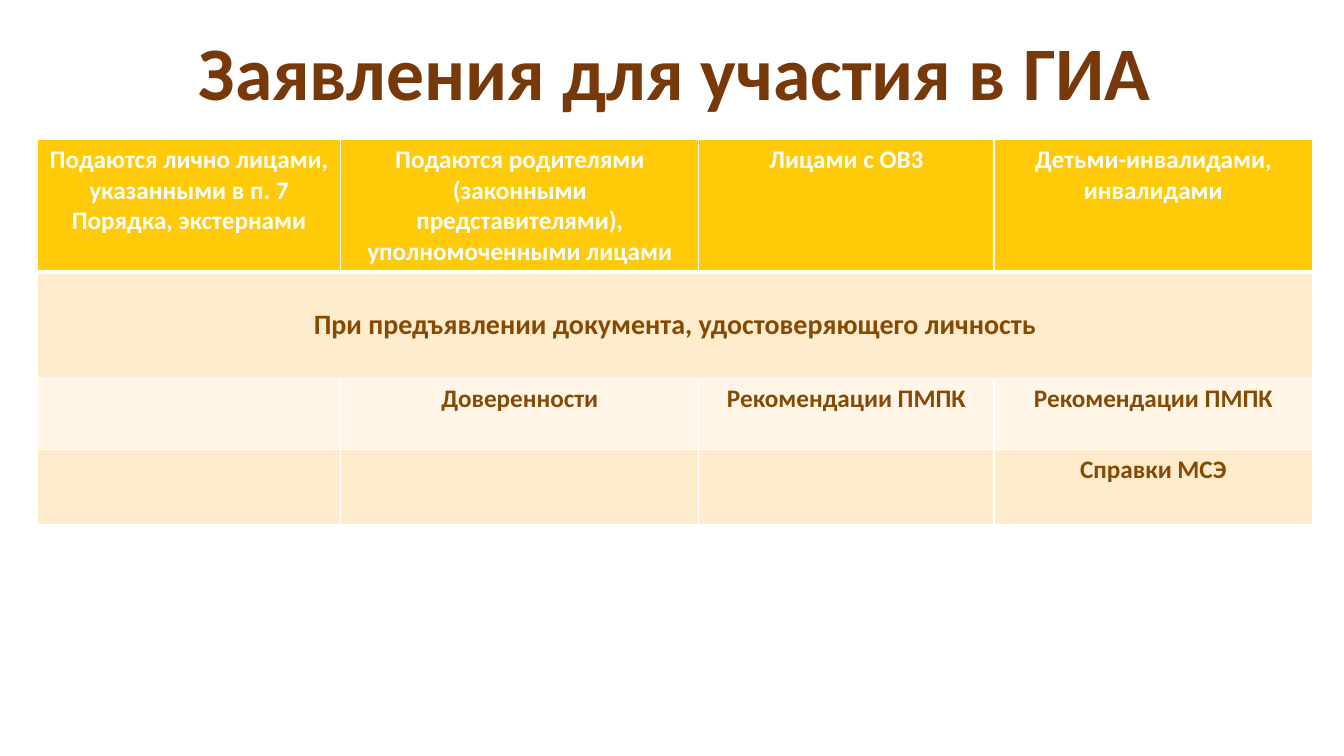
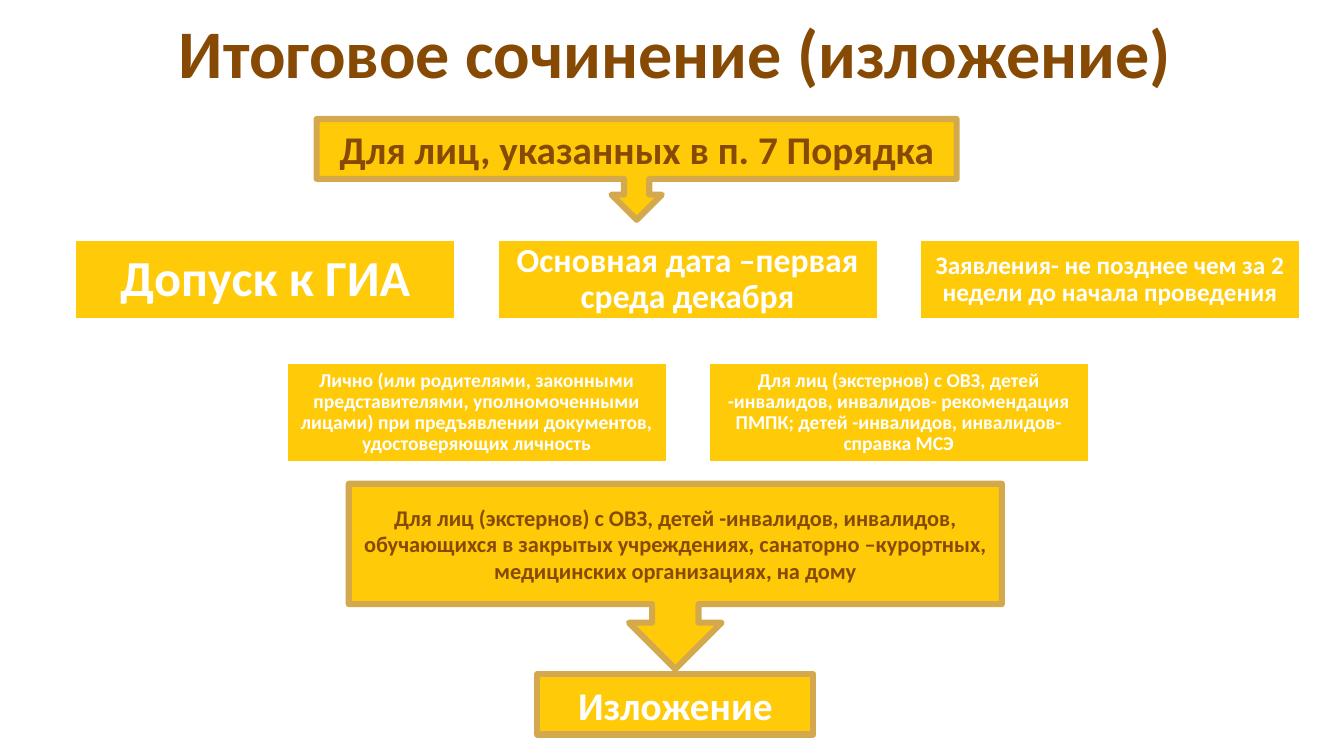
from lxml.etree import SubElement
from pptx import Presentation
from pptx.dml.color import RGBColor
from pptx.enum.shapes import MSO_SHAPE
from pptx.enum.text import MSO_ANCHOR, PP_ALIGN
from pptx.oxml.ns import qn
from pptx.util import Cm, Pt

# Shared style
FONT = "Calibri"
GOLD, OCHRE, WHITE = "FFCA08", "D4A94E", "FFFFFF"
BROWN, DARK_BROWN = "864A04", "77380A"
BAND, LIGHT_BAND = "FFECCC", "FFF6E7"
LINE_WIDTH = 4.33


def rgb(value):
    return RGBColor.from_string(value)


def write(tf, text, size=18, color=WHITE, spacing=1.0,
          anchor=MSO_ANCHOR.MIDDLE, inset=None):
    """Fill a text frame with one bold centred paragraph."""
    tf.word_wrap = True
    tf.vertical_anchor = anchor
    if inset is not None:
        tf.margin_left = tf.margin_right = Cm(inset)
        tf.margin_top = tf.margin_bottom = Cm(inset)
    p = tf.paragraphs[0]
    p.alignment = PP_ALIGN.CENTER
    p.line_spacing = spacing
    r = p.add_run()
    r.text = text
    r.font.name = FONT
    r.font.size = Pt(size)
    r.font.bold = True
    r.font.color.rgb = rgb(color)


def add_title(s, text, height, size, color):
    sp = s.shapes.add_textbox(Cm(0.81), Cm(0.43), Cm(32.41), Cm(height))
    write(sp.text_frame, text, size=size, color=color, spacing=0.9)


def add_box(s, text, left, top, width, height, shape=MSO_SHAPE.RECTANGLE,
            line=WHITE, adjustment=None, **text_format):
    sp = s.shapes.add_shape(shape, Cm(left), Cm(top), Cm(width), Cm(height))
    sp.shadow.inherit = False
    sp.fill.solid()
    sp.fill.fore_color.rgb = rgb(GOLD)
    sp.line.color.rgb = rgb(line)
    sp.line.width = Pt(LINE_WIDTH)
    if adjustment is not None:
        sp.adjustments[3] = adjustment
    write(sp.text_frame, text, **text_format)


def set_borders(cell, bottom):
    """Draw white cell borders; the bottom one has its own width."""
    tc_pr = cell._tc.get_or_add_tcPr()
    widths = {"a:lnL": 1, "a:lnR": 1, "a:lnT": 1, "a:lnB": bottom}
    for i, (tag, width) in enumerate(widths.items()):
        ln = SubElement(tc_pr, qn(tag), w=str(Pt(width)))
        fill = SubElement(ln, qn("a:solidFill"))
        SubElement(fill, qn("a:srgbClr"), val=WHITE)
        tc_pr.insert(i, ln)


def add_table(s, rows, left, top, widths, heights, fills):
    frame = s.shapes.add_table(len(rows), len(widths), Cm(left), Cm(top),
                               Cm(sum(widths)), Cm(sum(heights)))
    table = frame.table
    for column, width in zip(table.columns, widths):
        column.width = Cm(width)
    for i, texts in enumerate(rows):
        table.rows[i].height = Cm(heights[i])
        header, spanning = i == 0, len(texts) == 1
        for j, cell in enumerate(table.rows[i].cells):
            cell.fill.solid()
            cell.fill.fore_color.rgb = rgb(fills[i])
            set_borders(cell, bottom=3 if header else 1)
            if j < len(texts) and texts[j]:
                write(cell.text_frame, texts[j], size=20 if spanning else 18,
                      color=WHITE if header else BROWN)
                cell.vertical_anchor = (MSO_ANCHOR.MIDDLE if spanning
                                        else MSO_ANCHOR.TOP)
        if spanning:
            table.cell(i, 0).merge(table.cell(i, len(widths) - 1))


def build_applications(s):
    add_title(s, "Заявления для участия в ГИА", 2.97, 54, DARK_BROWN)
    rows = [
        ["Подаются лично лицами, указанными в п. 7 Порядка, экстернами",
         "Подаются родителями (законными представителями), "
         "уполномоченными лицами",
         "Лицами с ОВ3", "Детьми-инвалидами, инвалидами"],
        ["При предъявлении документа, удостоверяющего личность"],
        ["", "Доверенности", "Рекомендации ПМПК", "Рекомендации ПМПК"],
        ["", "", "", "Справки МСЭ"],
    ]
    add_table(s, rows, 0.94, 3.51, widths=[7.65, 9.02, 7.44, 8.03],
              heights=[3.35, 2.67, 1.8, 1.9],
              fills=[GOLD, BAND, LIGHT_BAND, BAND])


def build_essay(s):
    add_title(s, "Итоговое сочинение (изложение)", 1.98, 48.6, BROWN)

    # Condition cards: the second row is shifted by half a step
    left, step, width = 1.85, 10.64, 9.68
    card_rows = [
        (left, 6.0, 2.1, [
            ("Допуск к ГИА", 36, 0.38),
            ("Основная дата –первая среда декабря", 24, 0.25),
            ("Заявления- не позднее чем за 2 недели до начала проведения",
             18, 0.18)]),
        (left + step / 2, 9.1, 2.6, [
            ("Лично (или родителями, законными представителями, "
             "уполномоченными лицами) при предъявлении документов, "
             "удостоверяющих личность", 14, 0.15),
            ("Для лиц (экстернов) с ОВЗ, детей -инвалидов, инвалидов- "
             "рекомендация ПМПК; детей -инвалидов, инвалидов- справка МСЭ",
             14, 0.15)]),
    ]
    for row_left, top, height, cards in card_rows:
        for i, (text, size, inset) in enumerate(cards):
            add_box(s, text, row_left + i * step, top, width, height,
                    size=size, inset=inset, spacing=0.9)

    # Callouts and the result
    callout = MSO_SHAPE.DOWN_ARROW_CALLOUT
    add_box(s, "Для лиц, указанных в п. 7 Порядка", 7.98, 3.0, 16.13, 2.54,
            shape=callout, line=OCHRE, adjustment=0.594, size=28, color=BROWN)
    add_box(s, "Для лиц (экстернов) с ОВЗ, детей -инвалидов, инвалидов, "
            "обучающихся в закрытых учреждениях, санаторно –курортных, "
            "медицинских организациях, на дому", 8.79, 12.19, 16.46, 4.67,
            shape=callout, line=OCHRE, size=16, color=BROWN)
    add_box(s, "Изложение", 13.54, 16.99, 6.96, 1.52, line=OCHRE, size=28)


def main():
    prs = Presentation()
    prs.slide_width, prs.slide_height = Cm(33.87), Cm(19.05)
    for build in (build_applications, build_essay):
        build(prs.slides.add_slide(prs.slide_layouts[6]))
    prs.save("out.pptx")


if __name__ == "__main__":
    main()
